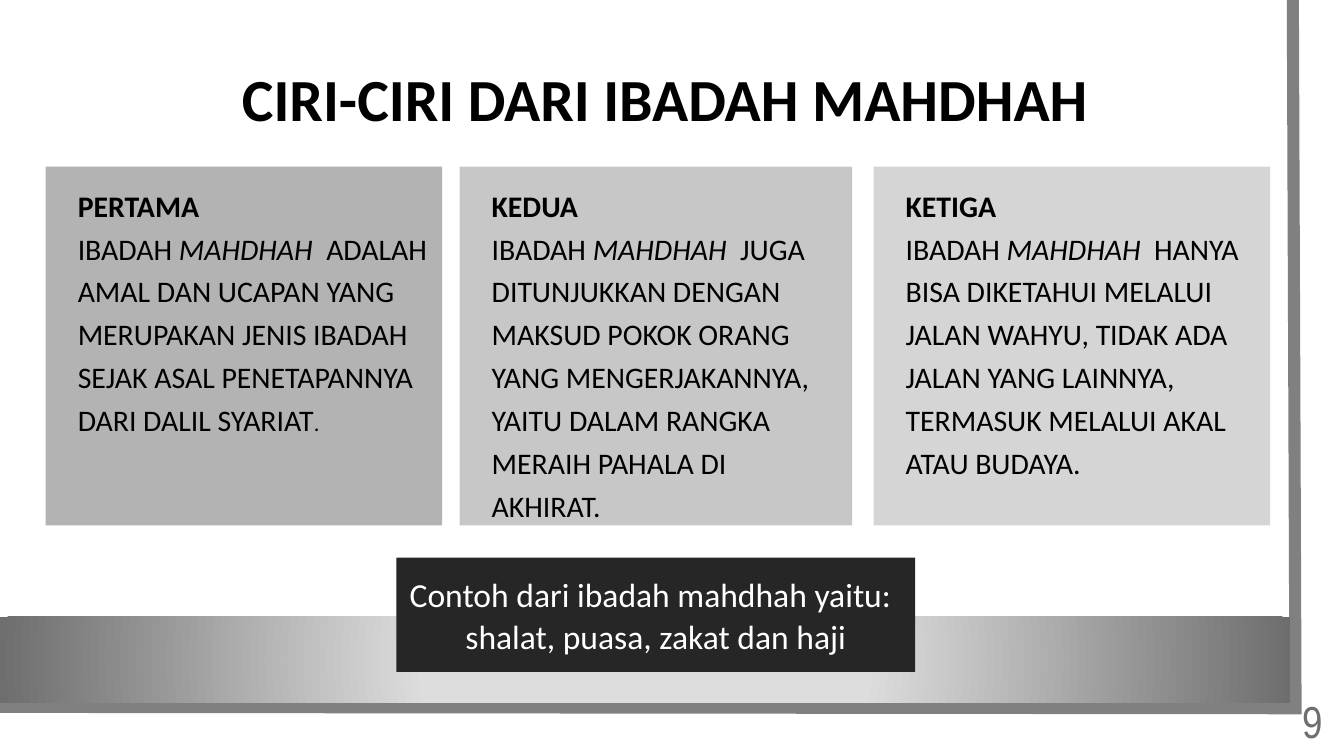
from lxml.etree import SubElement
from pptx import Presentation
from pptx.dml.color import RGBColor
from pptx.enum.shapes import MSO_SHAPE
from pptx.enum.text import MSO_ANCHOR, PP_ALIGN
from pptx.oxml.ns import qn
from pptx.util import Inches, Pt

COLORS = {
    "white": "FFFFFF", "black": "000000", "frame": "808080",
    "light": "DDDDDD", "dark": "6E6E6E", "note": "262626",
    "first": "B3B3B3", "second": "C7C7C7", "third": "D5D5D5",
}
TITLE = "CIRI-CIRI DARI IBADAH MAHDHAH "
# fill, left, width, heading, (text, italic, size) runs
CARDS = [
    ("first", 0.34, 2.95, "PERTAMA", [
        ("IBADAH ", False, 16), ("MAHDHAH  ", True, 16),
        ("ADALAH AMAL DAN UCAPAN YANG MERUPAKAN JENIS IBADAH SEJAK ASAL "
         "PENETAPANNYA DARI DALIL SYARIAT", False, 16), (".", False, 12)]),
    ("second", 3.42, 2.92, "KEDUA", [
        ("IBADAH ", False, 16), ("MAHDHAH  ", True, 16),
        ("JUGA DITUNJUKKAN DENGAN MAKSUD POKOK ORANG YANG MENGERJAKANNYA, "
         "YAITU DALAM RANGKA MERAIH PAHALA DI AKHIRAT.", False, 16)]),
    ("third", 6.5, 2.95, "KETIGA", [
        ("IBADAH ", False, 16), ("MAHDHAH  ", True, 16),
        ("HANYA BISA DIKETAHUI MELALUI JALAN WAHYU, TIDAK ADA JALAN YANG "
         "LAINNYA, TERMASUK MELALUI AKAL ATAU BUDAYA.", False, 16)]),
]
NOTE = [("Contoh dari ibadah mahdhah yaitu:", PP_ALIGN.LEFT),
        ("shalat, puasa, zakat dan haji", PP_ALIGN.CENTER)]

prs = Presentation()
prs.slide_width = Inches(10)
prs.slide_height = Inches(10 * 9 / 16)
shapes = prs.slides.add_slide(prs.slide_layouts[6]).shapes


def rgb(name):
    return RGBColor.from_string(COLORS[name])


def add_rect(box, fill=None):
    rect = shapes.add_shape(MSO_SHAPE.RECTANGLE, *map(Inches, box))
    rect.shadow.inherit = False
    rect.line.fill.background()
    if fill:
        rect.fill.solid()
        rect.fill.fore_color.rgb = rgb(fill)
    return rect


def set_frame(shape, anchor):
    frame = shape.text_frame
    frame.word_wrap = True
    frame.vertical_anchor = anchor
    frame.margin_left = frame.margin_right = Inches(0.1)
    frame.margin_top = frame.margin_bottom = Inches(0.1)
    return frame


def add_box(box, anchor):
    return set_frame(shapes.add_textbox(*map(Inches, box)), anchor)


def style(para, size, color, align=PP_ALIGN.LEFT, space=1.0, face="Calibri"):
    para.alignment, para.line_spacing = align, space
    font = para.font
    font.name, font.color.rgb = face, rgb(color)
    if size:
        font.size = Pt(size)


def add_band(box):
    """Draw the bar that is light in the middle and dark at its edges."""
    fill = add_rect(box).fill
    fill.gradient()
    stops = zip(fill.gradient_stops, [("light", 0.34), ("dark", 1)])
    for stop, (color, place) in stops:
        stop.color.rgb, stop.position = rgb(color), place
    grad = fill.gradient_stops[0]._gs.getparent().getparent()
    grad.remove(grad.find(qn("a:lin")))
    circle = SubElement(grad, qn("a:path"), path="circle")
    SubElement(circle, qn("a:fillToRect"),
               {side: "50000" for side in "ltrb"})


def add_edge():
    pen = shapes.build_freeform(Inches(9.62), 0)
    pen.add_line_segments([(Inches(9.64), Inches(5.27)),
                           (Inches(-0.02), Inches(5.26))], close=False)
    edge = pen.convert_to_shape()
    edge.shadow.inherit = False
    edge.fill.background()
    edge.line.color.rgb, edge.line.width = rgb("frame"), Pt(6.5)
    SubElement(edge.line._ln, qn("a:miter"), lim="800000")


def add_card(fill, left, width, head, runs):
    rect = add_rect((left, 1.24, width, 2.67), fill)
    frame = set_frame(rect, MSO_ANCHOR.TOP)
    first, body = frame.paragraphs[0], frame.add_paragraph()
    for para in (first, body):
        props = para._p.get_or_add_pPr()
        props.set("marL", str(Inches(0.14)))
        props.set("indent", "0")
    first.text = head
    style(first, 16, "black", space=1.2)
    first.font.bold = True
    style(body, None, "black", space=1.2)
    for text, slant, size in runs:
        run = body.add_run()
        run.text = text
        run.font.italic, run.font.size = slant, Pt(size)


add_rect((0, 0, 9.83, 5.45), "white")
add_edge()
add_band((0, 4.59, 9.6, 0.64))

title = add_box((0.86, 0.16, 8.28, 0.94), MSO_ANCHOR.BOTTOM).paragraphs[0]
title.text = TITLE
style(title, 32, "black", PP_ALIGN.CENTER, 0.9)
title.font.bold = True

for card in CARDS:
    add_card(*card)

number = add_box((9.53, 5.11, 0.47, 0.51), MSO_ANCHOR.MIDDLE).paragraphs[0]
number.text = "9"
style(number, 24, "dark", PP_ALIGN.CENTER, face="Arial Narrow")

note = set_frame(add_rect((2.95, 4.15, 3.86, 0.85), "note"), MSO_ANCHOR.TOP)
for i, (text, align) in enumerate(NOTE):
    para = note.add_paragraph() if i else note.paragraphs[0]
    para.text = text
    style(para, 18, "white", align, 1.06)

prs.save("out.pptx")
